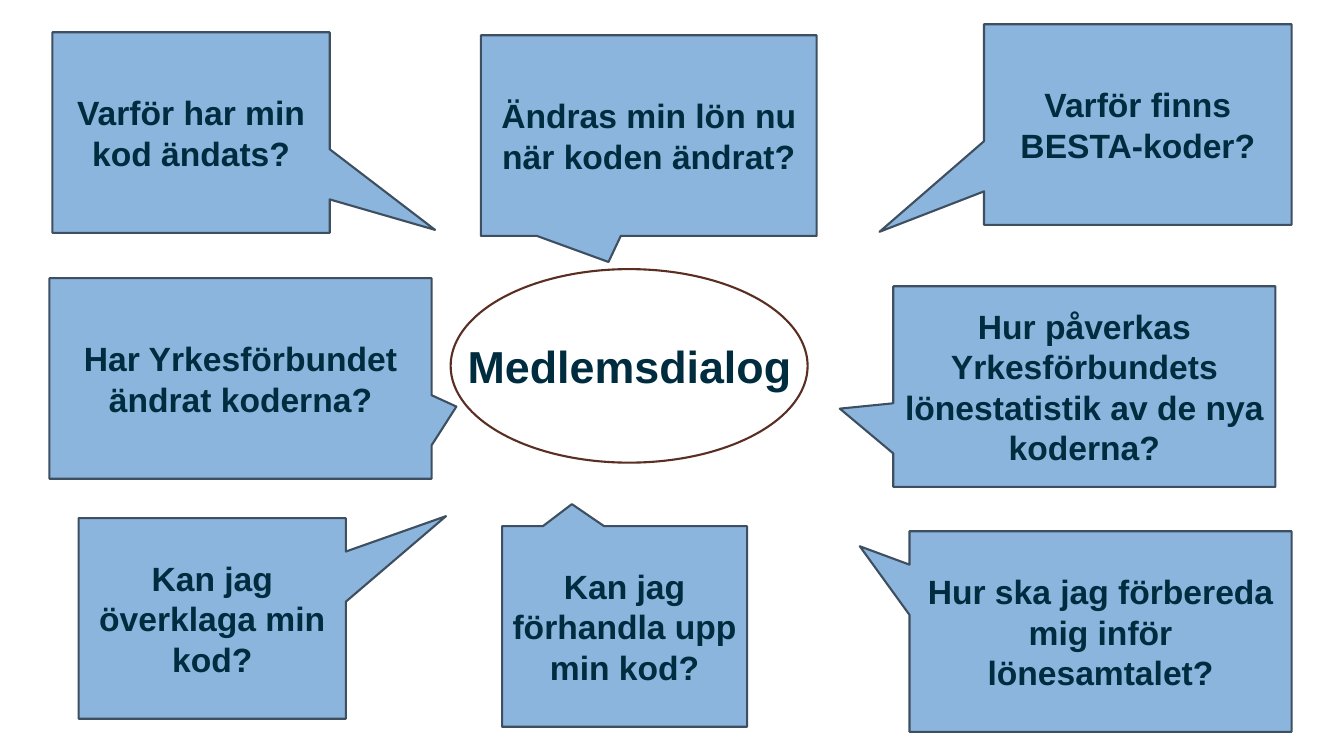
from typing import Any, NamedTuple

from pptx import Presentation
from pptx.dml.color import RGBColor
from pptx.enum import shapes, text
from pptx.util import Inches, Pt

NAVY = RGBColor(0x00, 0x2C, 0x3F)
SKY = RGBColor(0x8B, 0xB5, 0xDC)
SLATE = RGBColor(0x3D, 0x4F, 0x60)
BROWN = RGBColor(0x5A, 0x2E, 0x23)

QUESTION_HEIGHT = 1.99
FONT_FORMAT = {"name": "Arial", "bold": True}
FRAME_FORMAT = {"word_wrap": True, "auto_size": text.MSO_AUTO_SIZE.NONE}


class Question(NamedTuple):
    wording: str
    left: float
    top: float
    width: float
    tip: tuple[float, float]  # offset from the centre, as shares of width and height


QUESTIONS = [
    Question("Varför har min kod ändats?", 0.52, 0.32, 2.75, (0.88, 0.485)),
    Question("Ändras min lön nu när koden ändrat?", 4.77, 0.35, 3.33, (-0.12, 0.63)),
    Question("Varför finns BESTA-koder?", 9.76, 0.24, 3.05, (-0.84, 0.535)),
    Question("Har Yrkesförbundet ändrat koderna?", 0.49, 2.76, 3.79, (0.565, 0.14)),
    Question("Hur påverkas Yrkesförbundets lönestatistik av de nya koderna?",
             8.86, 2.84, 3.79, (-0.64, 0.11)),
    Question("Kan jag överklaga min kod?", 0.78, 5.14, 2.65, (0.875, -0.51)),
    Question("Kan jag förhandla upp min kod?", 4.98, 5.22, 2.43, (-0.215, -0.61)),
    Question("Hur ska jag förbereda mig inför lönesamtalet?",
             9.02, 5.27, 3.79, (-0.63, -0.425)),
]


def apply_format(target: Any, values: dict[str, Any]) -> None:
    for attribute, value in values.items():
        setattr(target, attribute, value)


def write(shape: Any, wording: str, size: float, anchor: text.MSO_ANCHOR) -> None:
    frame = shape.text_frame
    frame.text = wording
    apply_format(frame, FRAME_FORMAT | {"vertical_anchor": anchor})
    paragraph = frame.paragraphs[0]
    paragraph.alignment = text.PP_ALIGN.CENTER
    apply_format(paragraph.font, FONT_FORMAT | {"size": Pt(size)})
    paragraph.font.color.rgb = NAVY


def outline(shape: Any, color: RGBColor) -> None:
    shape.shadow.inherit = False
    shape.line.color.rgb = color
    shape.line.width = Pt(1.5)


def add_question(slide: Any, question: Question) -> None:
    callout = slide.shapes.add_shape(
        shapes.MSO_SHAPE.RECTANGULAR_CALLOUT,
        Inches(question.left), Inches(question.top),
        Inches(question.width), Inches(QUESTION_HEIGHT))
    for index, offset in enumerate(question.tip):
        callout.adjustments[index] = offset
    callout.fill.solid()
    callout.fill.fore_color.rgb = SKY
    outline(callout, SLATE)
    write(callout, question.wording, 24, text.MSO_ANCHOR.MIDDLE)


def add_topic(slide: Any) -> None:
    topic = slide.shapes.title
    apply_format(topic, {"left": Inches(4.17), "top": Inches(3.31),
                         "width": Inches(4.15), "height": Inches(1.75)})
    write(topic, "Medlemsdialog", 32, text.MSO_ANCHOR.TOP)
    ring = slide.shapes.add_shape(
        shapes.MSO_SHAPE.OVAL, Inches(4.47), Inches(2.67), Inches(3.54), Inches(1.92))
    ring.fill.background()
    outline(ring, BROWN)


def main() -> None:
    deck = Presentation()
    deck.slide_width, deck.slide_height = Inches(13.33), Inches(7.5)
    slide = deck.slides.add_slide(deck.slide_layouts.get_by_name("Title Only"))
    for question in QUESTIONS:
        add_question(slide, question)
    add_topic(slide)
    deck.save("out.pptx")


if __name__ == "__main__":
    main()
